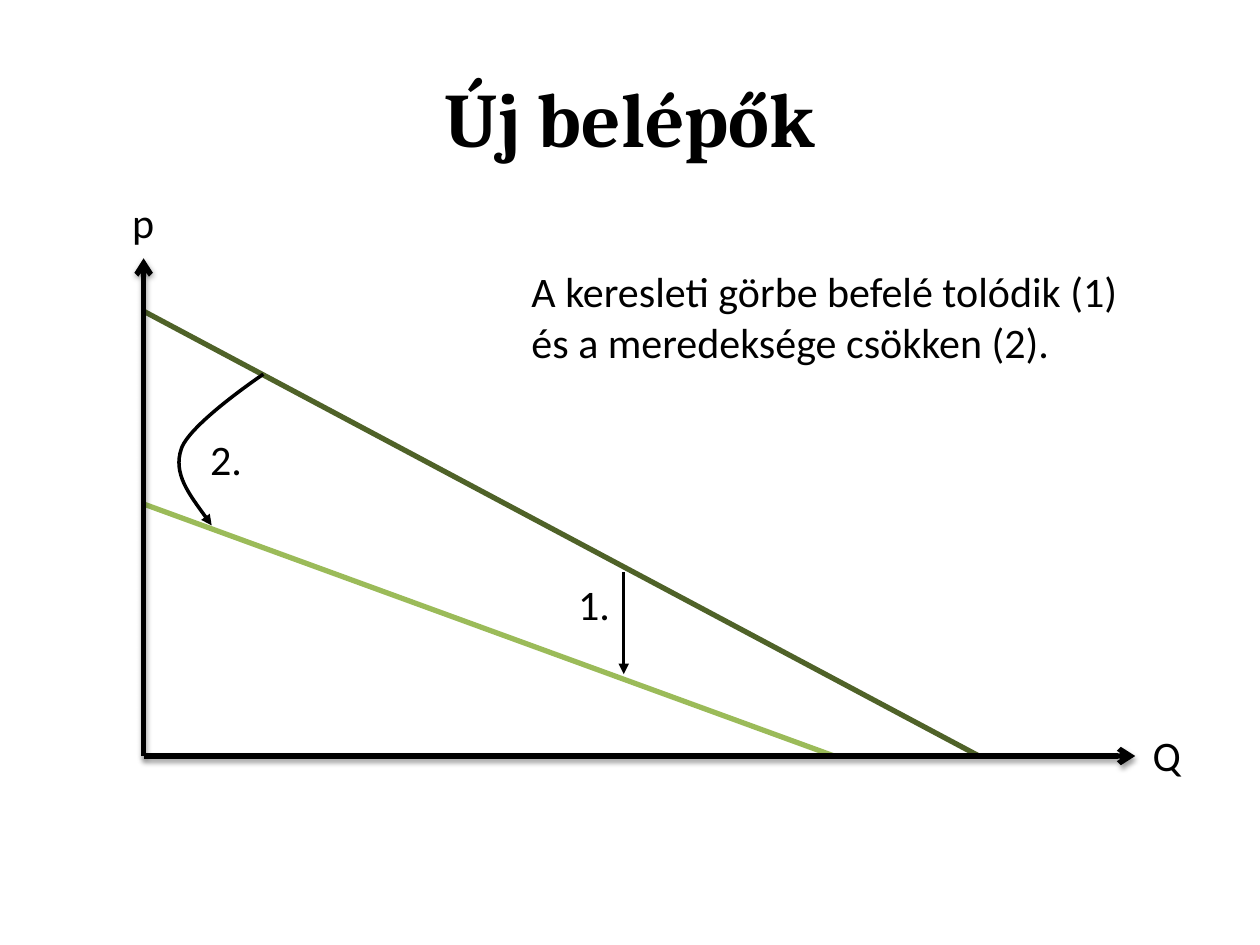
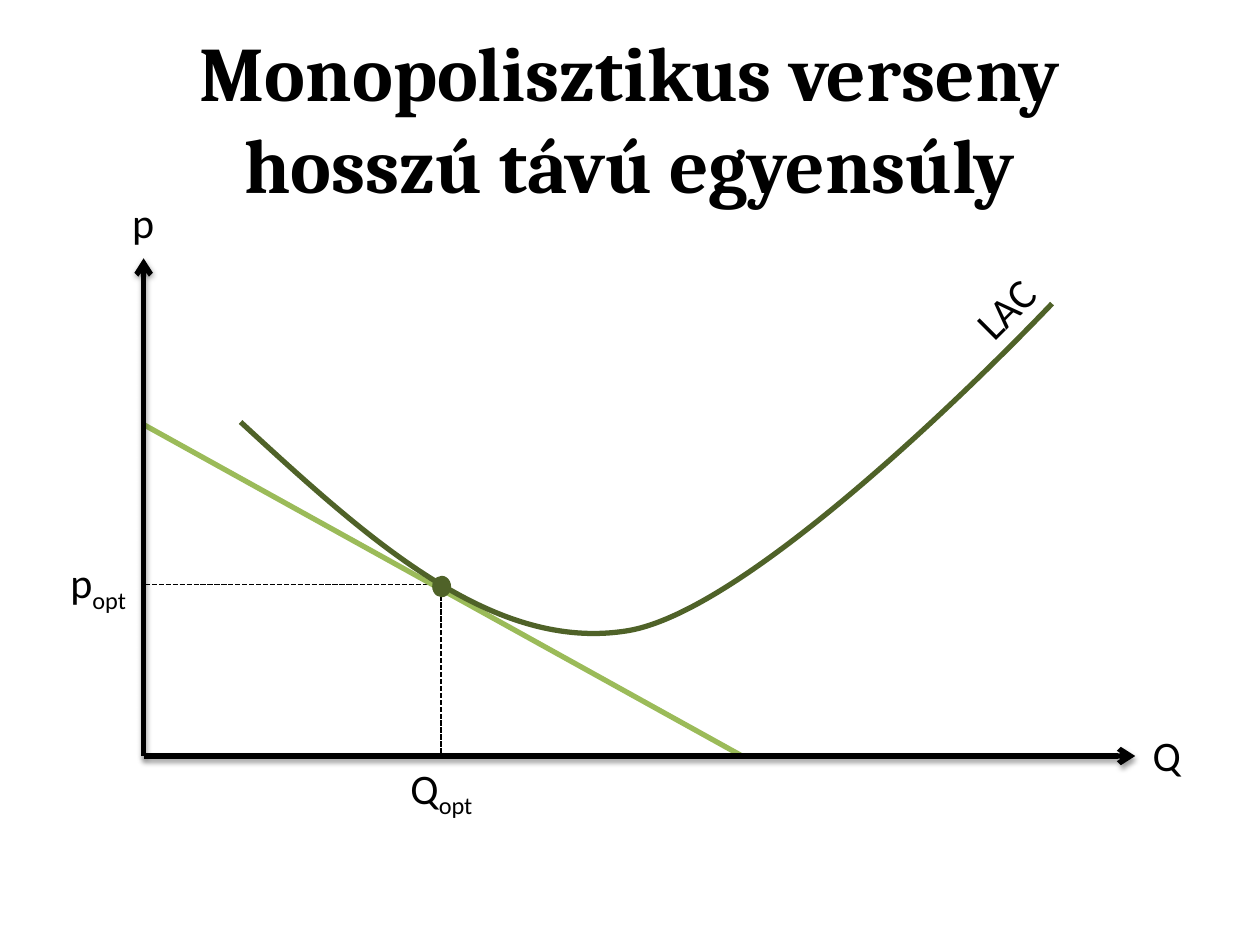
"""Builds two slides on demand and long-run equilibrium under monopolistic competition."""
from lxml import etree
from pptx import Presentation
from pptx.dml.color import RGBColor
from pptx.enum.dml import MSO_LINE
from pptx.enum.shapes import MSO_CONNECTOR, MSO_SHAPE
from pptx.enum.text import MSO_ANCHOR, MSO_AUTO_SIZE, PP_ALIGN
from pptx.oxml.ns import qn
from pptx.util import Inches, Pt

STRAIGHT = MSO_CONNECTOR.STRAIGHT
OVAL = MSO_SHAPE.OVAL
DASH = MSO_LINE.SQUARE_DOT
FIT = MSO_AUTO_SIZE.SHAPE_TO_FIT_TEXT
MIDDLE = MSO_ANCHOR.MIDDLE
CENTER = PP_ALIGN.CENTER

BLACK, DARK_GREEN, LIGHT_GREEN = "000000", "4F6228", "9BBB59"
TITLE_FONT, BODY_FONT = "Cambria", "Calibri"
ORIGIN = (1.14, 6)
TITLE_ONLY = 5


def rgb(color):
    """Turn a hex string into a colour."""
    return RGBColor.from_string(color)


def place(sp, box):
    """Set left, top, width and height in inches."""
    sp.left, sp.top, sp.width, sp.height = map(Inches, box)


def style_run(r, font, size, bold=False):
    """Format one run."""
    r.font.name, r.font.size, r.font.bold = font, Pt(size), bold
    r.font.color.rgb = rgb(BLACK)


def style_line(line, color, width):
    """Set colour and width of a line."""
    line.color.rgb = rgb(color)
    line.width = Pt(width)


def add_arrowhead(sp, end, kind):
    """Put an arrowhead at headEnd or tailEnd of a styled outline."""
    ln = sp._element.spPr.find(qn("a:ln"))
    etree.SubElement(ln, qn(f"a:{end}"), type=kind)


def add_line(s, start, end, color=BLACK, width=3, dash=None, arrow=None):
    """Draw a straight line without shadow and return it."""
    cx = s.shapes.add_connector(STRAIGHT, *map(Inches, start + end))
    style_line(cx.line, color, width)
    if dash:
        cx.line.dash_style = dash
    if arrow:
        add_arrowhead(cx, "tailEnd", arrow)
    etree.SubElement(cx._element.spPr, qn("a:effectLst"))
    return cx


def add_axis(s, end):
    """Draw an axis arrow from the origin with a soft shadow."""
    cx = add_line(s, ORIGIN, end, arrow="arrow")
    effects = cx._element.spPr.find(qn("a:effectLst"))
    shadow = etree.SubElement(effects, qn("a:outerShdw"), blurRad=str(Pt(3.1)),
                              dist=str(Pt(1.6)), dir="5400000", rotWithShape="0")
    color = etree.SubElement(shadow, qn("a:srgbClr"), val=BLACK)
    etree.SubElement(color, qn("a:alpha"), val="38000")


def add_curve(s, points, color, width):
    """Draw an open Bézier curve: a start, then three points per segment."""
    start, *rest = [tuple(map(Inches, pt)) for pt in points]
    builder = s.shapes.build_freeform(*start)
    builder.add_line_segments(rest, close=False)
    sp = builder.convert_to_shape()
    sp.fill.background()
    sp.shadow.inherit = False
    style_line(sp.line, color, width)
    outline = sp._element.find(".//" + qn("a:path"))
    segments = outline.findall(qn("a:lnTo"))
    for i in range(0, len(segments), 3):
        curve = etree.SubElement(outline, qn("a:cubicBezTo"))
        for segment in segments[i:i + 3]:
            curve.append(segment[0])
            outline.remove(segment)
    return sp


def add_label(s, text, box, sub="", wrap=False, rotation=0):
    """Add a text box, with an optional subscript."""
    tb = s.shapes.add_textbox(0, 0, 0, 0)
    tf = tb.text_frame
    tf.word_wrap, tf.auto_size = wrap, FIT
    tf.text = text
    p = tf.paragraphs[0]
    if sub:
        r = p.add_run()
        r.text = sub
        r.font._element.set("baseline", "-25000")
    for r in p.runs:
        style_run(r, BODY_FONT, 24)
    place(tb, box)
    tb.rotation = rotation


def add_slide(prs, title):
    """Add a slide with a formatted title."""
    s = prs.slides.add_slide(prs.slide_layouts[TITLE_ONLY])
    place(s.shapes.title, (0.5, 0.3, 9, 1.25))
    tf = s.shapes.title.text_frame
    tf.text = title
    tf.vertical_anchor = MIDDLE
    for p in tf.paragraphs:
        p.alignment = CENTER
        for r in p.runs:
            style_run(r, TITLE_FONT, 44, bold=True)
    return s


def add_axes(s):
    """Draw both labelled axes."""
    add_label(s, "p", (0.95, 1.51, 0.38, 0.51))
    add_label(s, "Q", (9.05, 5.74, 0.44, 0.5))
    add_axis(s, (9.01, 6))
    add_axis(s, (1.14, 2.05))


def add_entrants_slide(prs):
    """Show demand shifting inwards and flattening."""
    s = add_slide(prs, "Új belépők")
    add_line(s, (6.62, 6), (1.14, 4), LIGHT_GREEN)
    add_line(s, (1.14, 2.47), (7.77, 6), DARK_GREEN)
    add_axes(s)
    add_line(s, (4.95, 4.54), (4.95, 5.35), width=2, arrow="triangle")
    turn = add_curve(s, [(1.68, 4.17), (1.53, 3.96), (1.37, 3.76), (1.44, 3.56),
                         (1.51, 3.36), (2.09, 2.97), (2.09, 2.97)], BLACK, 2)
    add_arrowhead(turn, "headEnd", "triangle")
    add_label(s, "A keresleti görbe befelé tolódik (1) és a meredeksége csökken (2).",
              (4.12, 2.06, 5, 0.91), wrap=True)
    add_label(s, "1.", (4.49, 4.54, 0.46, 0.51))
    add_label(s, "2.", (1.57, 3.39, 0.46, 0.51))


def add_equilibrium_slide(prs):
    """Show the tangency of demand and long-run average cost."""
    s = add_slide(prs, "Monopolisztikus verseny\vhosszú távú egyensúly")
    add_line(s, (1.15, 4.64), (3.45, 4.64), width=1, dash=DASH)
    add_line(s, (3.5, 5.98), (3.5, 4.62), width=1, dash=DASH)
    add_line(s, (5.89, 6), (1.14, 3.37), LIGHT_GREEN)
    add_axes(s)
    add_curve(s, [(1.91, 3.35), (2.9, 4.26), (3.89, 5.17), (4.96, 5.01),
                  (6.04, 4.86), (8.35, 2.41), (8.35, 2.41)], DARK_GREEN, 3)
    optimum = s.shapes.add_shape(OVAL, 0, 0, 0, 0)
    place(optimum, (3.43, 4.57, 0.15, 0.17))
    optimum.shadow.inherit = False
    optimum.fill.solid()
    optimum.fill.fore_color.rgb = rgb(DARK_GREEN)
    optimum.line.fill.background()
    add_label(s, "LAC", (7.62, 2.19, 0.72, 0.5), rotation=315)
    add_label(s, "p", (0.46, 4.37, 0.69, 0.51), sub="opt")
    add_label(s, "Q", (3.16, 6, 0.74, 0.51), sub="opt")


def main():
    """Build and save the presentation."""
    prs = Presentation()
    prs.slide_width, prs.slide_height = Inches(10), Inches(7.5)
    add_entrants_slide(prs)
    add_equilibrium_slide(prs)
    prs.save("out.pptx")


if __name__ == "__main__":
    main()
